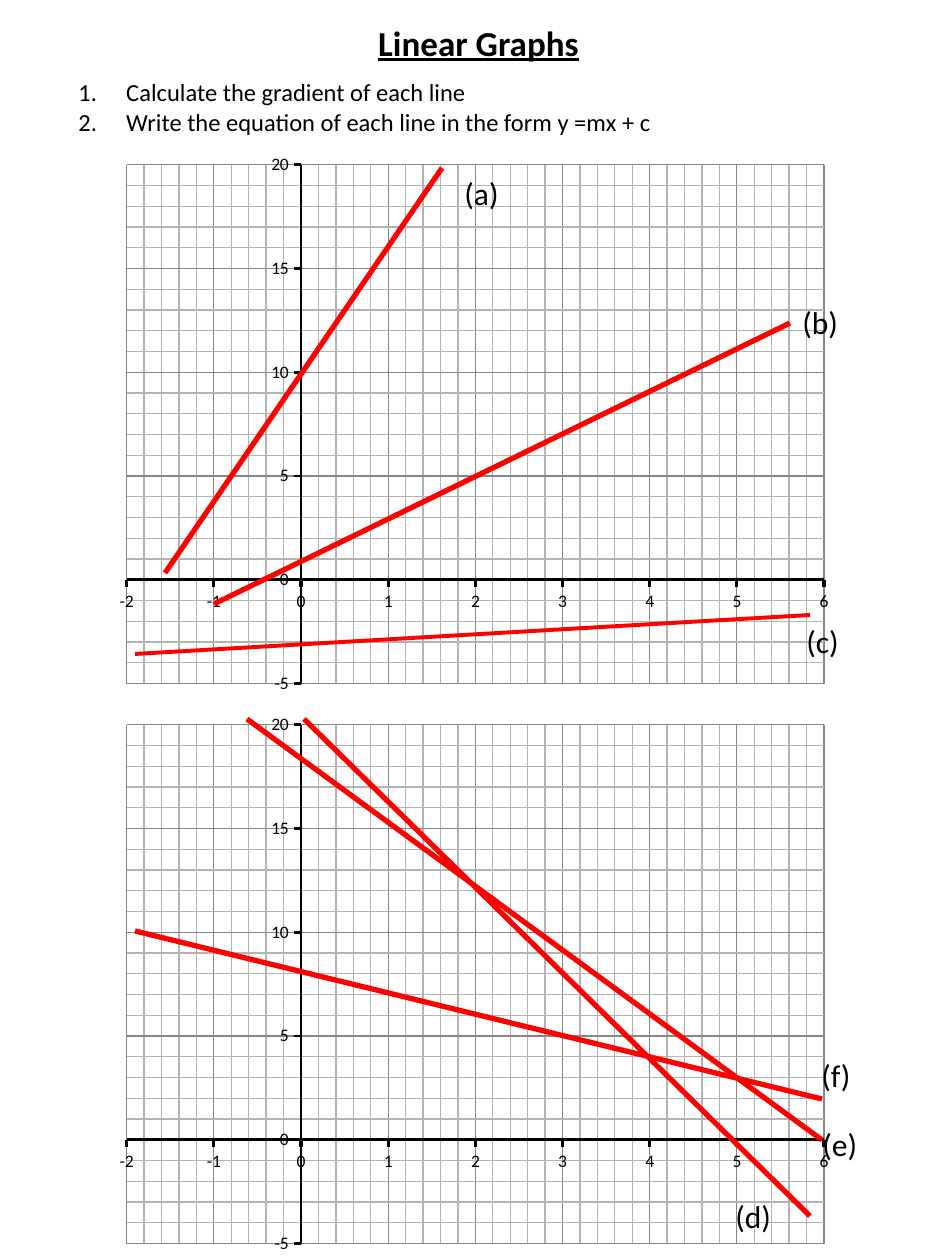
"""Build the Linear Graphs worksheet: two gridded axes with straight lines to identify."""
from lxml import etree
from pptx import Presentation
from pptx import util as u
from pptx.chart.data import XyChartData
from pptx.dml.color import RGBColor
from pptx.enum import chart as charts, shapes, text
from pptx.oxml import parse_xml
from pptx.oxml.ns import nsdecls, qn

PX = 914400 / 126
FONT, BLACK, RED = "Calibri", "000000", "FF0000"
MAJOR_GRID, MINOR_GRID = "868686", "B3B3B3"

TITLE = "Linear Graphs"
QUESTIONS = [
    "Calculate the gradient of each line",
    "Write the equation of each line in the form y =mx + c",
]
CHART_LEFT, CHART_WIDTH, CHART_HEIGHT = 106, 738, 561
CHART_TOPS = [144, 704]
PLOT_AREA = {"x": 0.028, "y": 0.037, "w": 0.945, "h": 0.925}
POINTS = [(x, 3 * x - 1) for x in range(-3, 11)]
X_AXIS = {"low": -2, "high": 6, "major": 1, "minor": 0.2, "weight": 1.75}
Y_AXIS = {"low": -5, "high": 20, "major": 5, "minor": 1, "weight": 1.5}
LINES = [
    (214, 604, 790, 323, 3),
    (165, 573, 442, 168, 3),
    (135, 654, 810, 615, 2.25),
    (304, 719, 810, 1216, 3),
    (247, 719, 822, 1140, 3),
    (135, 931, 822, 1099, 3),
]
LABELS = [
    ("(a)", 452, 168), ("(b)", 790, 297), ("(c)", 794, 616),
    ("(d)", 723, 1191), ("(f)", 809, 1050), ("(e)", 810, 1119),
]


def px(value):
    return u.Emu(round(value * PX))


def color(value):
    return RGBColor.from_string(value)


def style_line(line, value, weight):
    line.color.rgb = color(value)
    line.width = u.Pt(weight)


def style_axis(axis, low, high, major, minor, weight):
    axis.minimum_scale, axis.maximum_scale = low, high
    axis.major_unit, axis.minor_unit = major, minor
    axis.major_tick_mark = charts.XL_TICK_MARK.OUTSIDE
    axis.minor_tick_mark = charts.XL_TICK_MARK.NONE
    axis.tick_label_position = charts.XL_TICK_LABEL_POSITION.NEXT_TO_AXIS
    axis.has_major_gridlines = axis.has_minor_gridlines = True
    style_line(axis.major_gridlines.format.line, MAJOR_GRID, 0.75)
    minor_lines = axis._element.find(qn("c:minorGridlines"))
    minor_lines.append(parse_xml(
        f'<c:spPr {nsdecls("c", "a")}><a:ln w="9525"><a:solidFill>'
        f'<a:srgbClr val="{MINOR_GRID}"/></a:solidFill></a:ln></c:spPr>'))
    style_line(axis.format.line, BLACK, weight)


def set_plot_area(chart):
    plot_area = chart._chartSpace.find(".//" + qn("c:plotArea"))
    for layout in plot_area.findall(qn("c:layout")):
        plot_area.remove(layout)
    layout = etree.Element(qn("c:layout"))
    manual = etree.SubElement(layout, qn("c:manualLayout"))
    settings = [("layoutTarget", "inner"), ("xMode", "edge"), ("yMode", "edge")]
    for name, value in settings + list(PLOT_AREA.items()):
        etree.SubElement(manual, qn("c:" + name)).set("val", str(value))
    plot_area.insert(0, layout)


def add_graph(slide, top):
    data = XyChartData()
    series = data.add_series("Series 1")
    for x, y in POINTS:
        series.add_data_point(x, y)
    chart = slide.shapes.add_chart(
        charts.XL_CHART_TYPE.XY_SCATTER, px(CHART_LEFT), px(top),
        px(CHART_WIDTH), px(CHART_HEIGHT), data).chart
    chart.has_legend = chart.has_title = False
    chart.font.name, chart.font.size = FONT, u.Pt(10)
    chart.font.color.rgb = color(BLACK)
    chart.plots[0].vary_by_categories = False
    series = chart.plots[0].series[0]
    series.smooth = False
    series.marker.style = charts.XL_MARKER_STYLE.NONE
    series.format.line.fill.background()
    style_axis(chart.category_axis, **X_AXIS)
    style_axis(chart.value_axis, **Y_AXIS)
    set_plot_area(chart)


def add_line(slide, x1, y1, x2, y2, weight):
    connector = slide.shapes.add_connector(
        shapes.MSO_CONNECTOR.STRAIGHT, px(x1), px(y1), px(x2), px(y2))
    style_line(connector.line, RED, weight)
    etree.SubElement(connector._element.spPr, qn("a:effectLst"))


def add_text(slide, paragraphs, left, top, width, height, size, numbered=False):
    frame = slide.shapes.add_textbox(px(left), px(top), px(width), px(height)).text_frame
    frame.word_wrap = True
    frame.auto_size = text.MSO_AUTO_SIZE.SHAPE_TO_FIT_TEXT
    frame.text = "\n".join(paragraphs)
    for paragraph in frame.paragraphs:
        if numbered:
            properties = paragraph._p.get_or_add_pPr()
            properties.set("marL", str(u.Inches(0.38)))
            properties.set("indent", str(-u.Inches(0.38)))
            etree.SubElement(properties, qn("a:buAutoNum")).set("type", "arabicPeriod")
        for run in paragraph.runs:
            run.font.name, run.font.size = FONT, u.Pt(size)
            run.font.color.rgb = color(BLACK)
    return frame


def main():
    presentation = Presentation()
    presentation.slide_width, presentation.slide_height = u.Inches(7.5), u.Inches(10)
    slide = presentation.slides.add_slide(presentation.slide_layouts[6])
    for top in CHART_TOPS:
        add_graph(slide, top)
    for line in LINES:
        add_line(slide, *line)
    for label, left, top in LABELS:
        add_text(slide, [label], left, top, 79, 50, 18)
    title = add_text(slide, [TITLE], 135, 15, 687, 55, 20).paragraphs[0]
    title.alignment = text.PP_ALIGN.CENTER
    title.runs[0].font.bold = title.runs[0].font.underline = True
    add_text(slide, QUESTIONS, 66, 71, 853, 72, 14, numbered=True)
    presentation.save("out.pptx")


if __name__ == "__main__":
    main()
